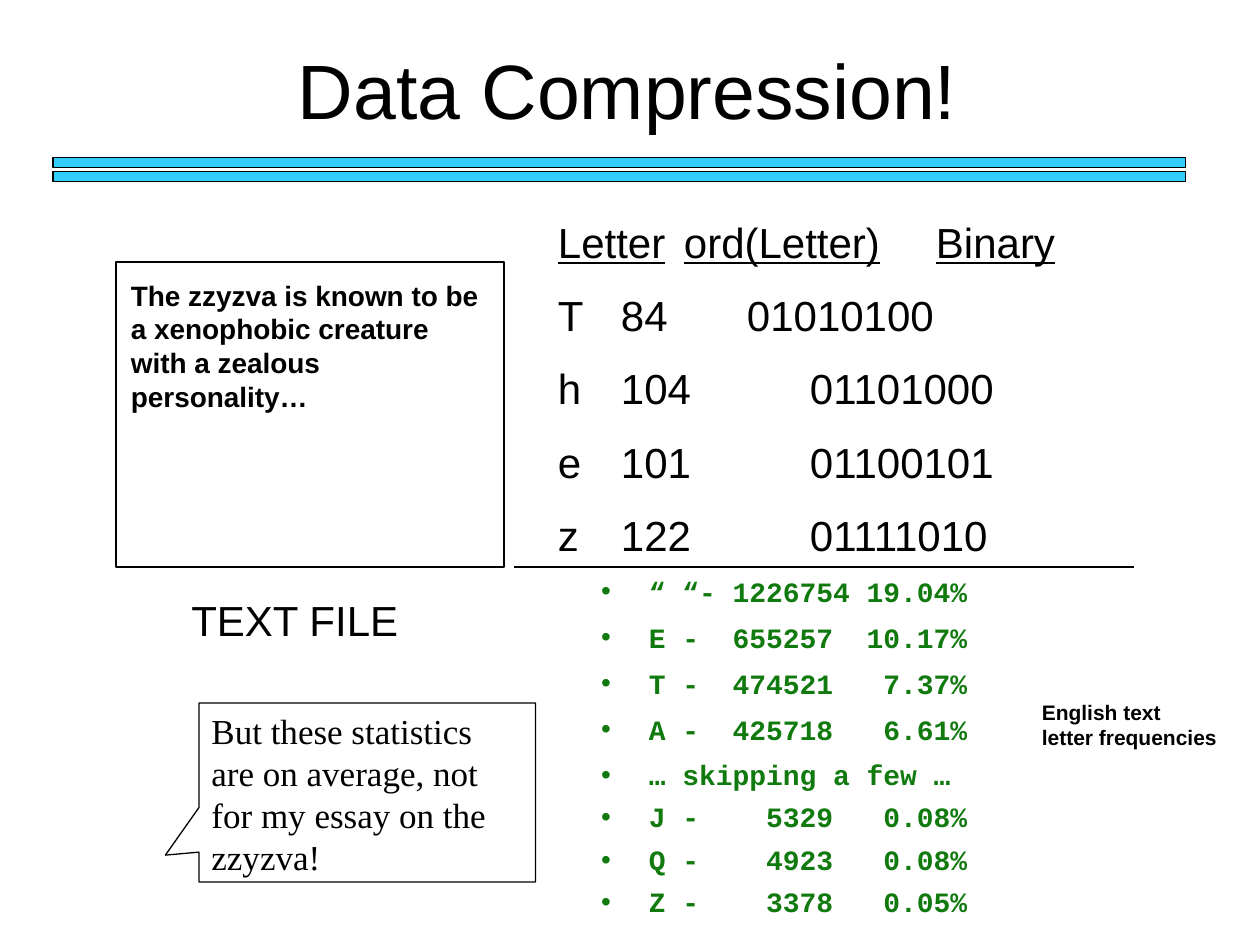
"""Build the Data Compression slide: letter codes and letter frequencies."""
from lxml.etree import SubElement
from pptx import Presentation
from pptx.dml.color import RGBColor
from pptx.enum.shapes import MSO_CONNECTOR, MSO_SHAPE
from pptx.enum.text import MSO_ANCHOR, PP_ALIGN
from pptx.oxml.ns import qn
from pptx.util import Inches, Pt

BLACK = RGBColor(0x00, 0x00, 0x00)
WHITE = RGBColor(0xFF, 0xFF, 0xFF)
CYAN = RGBColor(0x33, 0xCC, 0xFF)
GREEN = RGBColor(0x11, 0x7A, 0x0E)

TITLE = "Data Compression!"
ESSAY = "The zzyzva is known to be a xenophobic creature with a zealous personality…"
CAPTION = "TEXT FILE"
REMARK = "But these statistics are on average, not for my essay on the zzyzva!"
NOTE = ["English text", "letter frequencies"]
CODE_HEADER = "Letter\tord(Letter)\tBinary"
CODES = [("T", 84), ("h", 104), ("e", 101), ("z", 122)]
COMMON = [
    "“ “- 1226754 19.04%",
    "E -  655257  10.17%",
    "T -  474521   7.37%",
    "A -  425718   6.61%",
    "… skipping a few …",
]
RARE = [
    "J -    5329   0.08%",
    "Q -    4923   0.08%",
    "Z -    3378   0.05%",
]


def place(shape, left, top, width, height):
    shape.left, shape.top = Inches(left), Inches(top)
    shape.width, shape.height = Inches(width), Inches(height)


def write(frame, lines, size, color=BLACK, name="Arial", bold=False, before=0):
    for index, line in enumerate(lines):
        para = frame.paragraphs[0] if index == 0 else frame.add_paragraph()
        para.text = line
        para.alignment = PP_ALIGN.LEFT
        para.space_before = Pt(before)
        font = para.font
        font.size, font.name, font.bold = Pt(size), name, bold
        font.color.rgb = color
    return frame.paragraphs


def add_text(page, bounds, lines, size, wrap=True, **style):
    box = page.shapes.add_textbox(*map(Inches, bounds))
    box.text_frame.word_wrap = wrap
    return box, write(box.text_frame, lines, size, **style)


def add_outlined(shapes, kind, bounds, fill=None):
    shape = shapes.add_shape(kind, *map(Inches, bounds))
    shape.shadow.inherit = False
    if fill is None:
        shape.fill.background()
    else:
        shape.fill.solid()
        shape.fill.fore_color.rgb = fill
    shape.line.color.rgb = BLACK
    shape.line.width = Pt(0.75)
    return shape


def set_insets(frame):
    frame.margin_left = frame.margin_top = frame.margin_bottom = Inches(0.06)
    frame.margin_right = Inches(0.1)


def add_bullet(para):
    properties = para._p.get_or_add_pPr()
    properties.set("marL", str(Inches(0.42)))
    properties.set("indent", str(Inches(-0.38)))
    SubElement(properties, qn("a:buFont"), typeface="Arial")
    SubElement(properties, qn("a:buChar"), char="•")


def main():
    deck = Presentation()
    deck.slide_width, deck.slide_height = Inches(10), Inches(7.5)
    page = deck.slides.add_slide(deck.slide_layouts[5])

    title = page.shapes.title
    place(title, 0.75, 0.08, 8.5, 1.25)
    set_insets(title.text_frame)
    title.text_frame.vertical_anchor = MSO_ANCHOR.MIDDLE
    write(title.text_frame, [TITLE], 44)[0].alignment = PP_ALIGN.CENTER

    rule = page.shapes.add_group_shape()
    for top in (1.25, 1.36):
        add_outlined(rule.shapes, MSO_SHAPE.RECTANGLE, (0.42, top, 8.99, 0.08), CYAN)

    add_text(page, (0.94, 2.16, 2.98, 1.17), [ESSAY], 16, bold=True)
    add_outlined(page.shapes, MSO_SHAPE.RECTANGLE, (0.92, 2.08, 3.08, 2.42))
    add_text(page, (1.42, 4.67, 1.85, 0.5), [CAPTION], 24, wrap=False)

    rows = [f"{letter}\t{code}\t\t{code:08b}" for letter, code in CODES]
    table_text = add_text(page, (4.33, 1.67, 4.92, 2.9), [CODE_HEADER] + rows, 24, before=13)
    table_text[1][0].font.underline = True

    frequencies, paras = add_text(
        page, (4.67, 4.5, 3.75, 2.92), COMMON + RARE, 16,
        color=GREEN, name="Courier New", bold=True, before=7)
    set_insets(frequencies.text_frame)
    for para in paras[len(COMMON):]:
        para.line_spacing = 0.9
    for para in paras:
        add_bullet(para)

    divider = page.shapes.add_connector(
        MSO_CONNECTOR.STRAIGHT, Inches(4.08), Inches(4.5), Inches(9), Inches(4.5))
    divider.line.color.rgb = BLACK
    divider.line.width = Pt(0.75)
    SubElement(divider._element.spPr, qn("a:effectLst"))

    callout = add_outlined(
        page.shapes, MSO_SHAPE.RECTANGULAR_CALLOUT, (1.58, 5.58, 2.67, 1.42), WHITE)
    callout.adjustments[0], callout.adjustments[1] = -0.6, 0.35
    callout.text_frame.word_wrap = True
    callout.text_frame.vertical_anchor = MSO_ANCHOR.TOP
    write(callout.text_frame, [REMARK], 20, name="Times New Roman")

    add_text(page, (8.17, 5.5, 1.59, 0.5), NOTE, 12, wrap=False, bold=True)
    deck.save("out.pptx")


if __name__ == "__main__":
    main()
